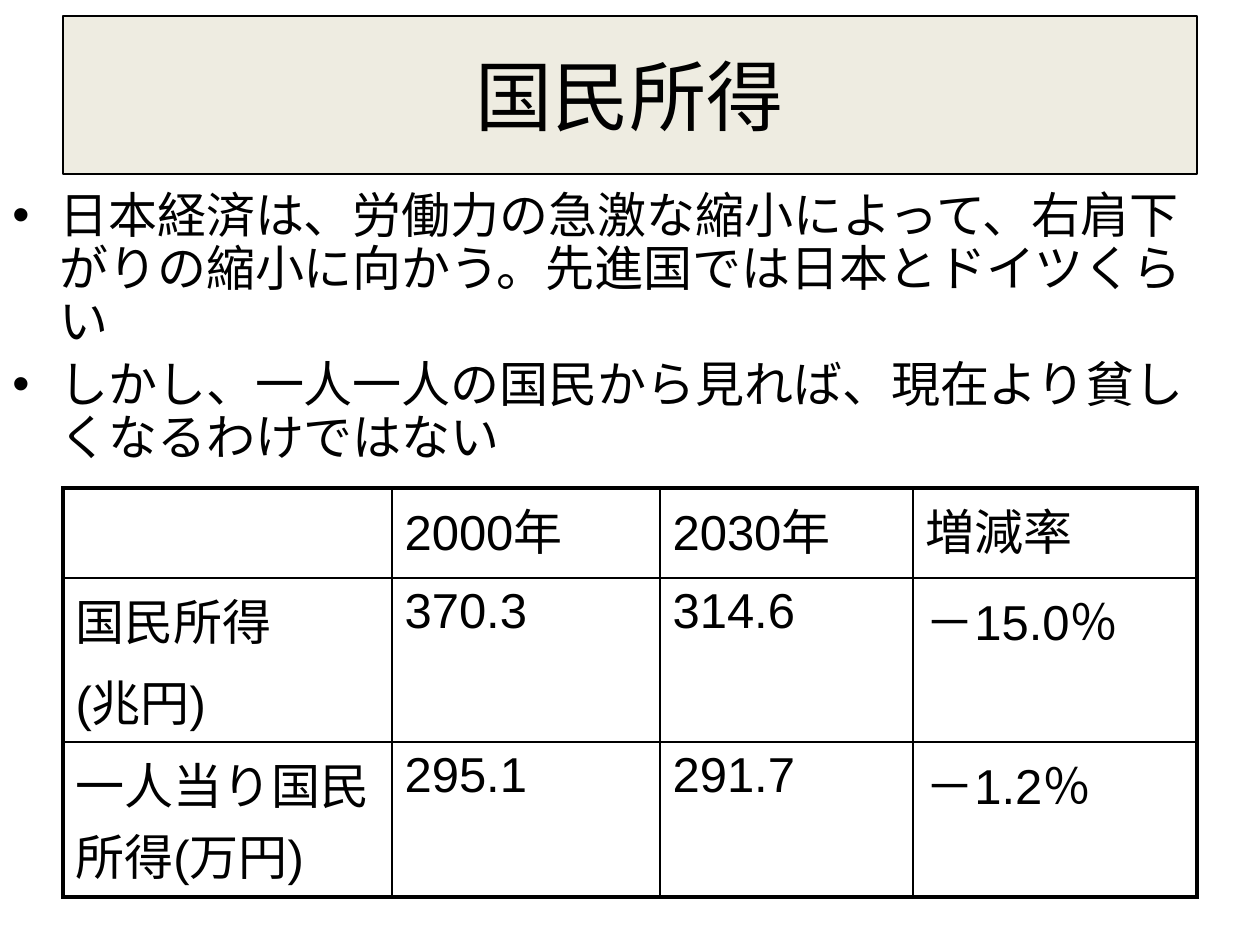
from pptx import Presentation
from pptx.dml.color import RGBColor
from pptx.enum.shapes import MSO_SHAPE
from pptx.enum.text import MSO_ANCHOR, PP_ALIGN
from pptx.oxml.ns import qn
from pptx.util import Pt
from lxml import etree

RECTANGLE = MSO_SHAPE.RECTANGLE
MIDDLE, TOP = MSO_ANCHOR.MIDDLE, MSO_ANCHOR.TOP
CENTER, LEFT = PP_ALIGN.CENTER, PP_ALIGN.LEFT
EMU_PER_PX = 914400 / 126

THEME = {
    "ink": RGBColor(0x00, 0x00, 0x00),
    "title_fill": RGBColor(0xEE, 0xEC, 0xE1),
    "title_size": Pt(44),
    "text_size": Pt(28),
    "text_font": "Calibri",
    "table_font": "Arial",
    "thin": Pt(1),
    "thick": Pt(2.25),
}

BULLETS = [
    "日本経済は、労働力の急激な縮小によって、右肩下がりの縮小に向かう。先進国では日本とドイツくらい",
    "しかし、一人一人の国民から見れば、現在より貧しくなるわけではない",
]
COLUMN_WIDTHS = [329, 268, 253, 284]
# Tall enough for two-line labels
ROW_HEIGHTS = [90, 164, 155]
INCOME_ROWS = [
    ["", "2000年", "2030年", "増減率"],
    ["国民所得\n(兆円)", "370.3", "314.6", "－15.0％"],
    ["一人当り国民所得(万円)", "295.1", "291.7", "－1.2％"],
]


def px(length):
    return round(length * EMU_PER_PX)


def area(*lengths):
    return [px(length) for length in lengths]


def apply_format(target, values):
    for name, value in values.items():
        setattr(target, name, value)


def add_child(parent, tag, **attributes):
    return etree.SubElement(parent, qn(tag), attributes)


def write_lines(frame, lines, font, size, **para_format):
    """Fill a text frame with one paragraph per line."""
    frame.word_wrap = True
    for index, line in enumerate(lines):
        para = frame.paragraphs[0] if index == 0 else frame.add_paragraph()
        apply_format(para, para_format)
        span = para.add_run()
        span.text = line
        apply_format(span.font, {"name": font, "size": size, "bold": False})
        span.font.color.rgb = THEME["ink"]
    return frame.paragraphs


def space_before(para, percent):
    spacing = add_child(para._p.get_or_add_pPr(), "a:spcBef")
    add_child(spacing, "a:spcPct", val=str(percent * 1000))


def add_bullet(para, indent):
    properties = para._p.get_or_add_pPr()
    properties.set("marL", str(px(indent)))
    properties.set("indent", str(-px(indent)))
    add_child(properties, "a:buFont", typeface="Arial")
    add_child(properties, "a:buChar", char="•")


def add_title(page, text):
    box = page.shapes.add_shape(RECTANGLE, *area(63, 16, 1134, 158))
    box.shadow.inherit = False
    box.fill.solid()
    box.fill.fore_color.rgb = THEME["title_fill"]
    box.line.color.rgb = THEME["ink"]
    box.line.width = Pt(0.75)
    box.text_frame.vertical_anchor = MIDDLE
    write_lines(box.text_frame, [text], THEME["text_font"],
                THEME["title_size"], alignment=CENTER)


def add_bullets(page, lines):
    box = page.shapes.add_textbox(*area(0, 185, 1197, 297))
    box.text_frame.vertical_anchor = TOP
    for para in write_lines(box.text_frame, lines, THEME["text_font"],
                            THEME["text_size"], alignment=LEFT, line_spacing=0.9):
        space_before(para, 20)
        add_bullet(para, 47)


def add_borders(cell, thick_sides):
    properties = cell._tc.get_or_add_tcPr()
    for side in "LRTB":
        width = THEME["thick"] if side in thick_sides else THEME["thin"]
        line = add_child(properties, f"a:ln{side}", w=str(width))
        fill = add_child(line, "a:solidFill")
        add_child(fill, "a:srgbClr", val=str(THEME["ink"]))


def add_income_table(page, rows):
    last_row, last_column = len(rows) - 1, len(COLUMN_WIDTHS) - 1
    frame = page.shapes.add_table(len(rows), len(COLUMN_WIDTHS), *area(
        63, 488, sum(COLUMN_WIDTHS), sum(ROW_HEIGHTS)))
    table = frame.table
    apply_format(table, {"first_row": False, "horz_banding": False})
    for column, width in zip(table.columns, COLUMN_WIDTHS):
        column.width = px(width)
    for row, height in zip(table.rows, ROW_HEIGHTS):
        row.height = px(height)

    for row_index, row in enumerate(rows):
        for column_index, text in enumerate(row):
            cell = table.cell(row_index, column_index)
            # The outer frame is thick, inner rules are thin
            outer = {"L": column_index == 0, "R": column_index == last_column,
                     "T": row_index == 0, "B": row_index == last_row}
            add_borders(cell, [side for side, on_edge in outer.items() if on_edge])
            cell.fill.background()
            if text:
                for para in write_lines(cell.text_frame, text.split("\n"),
                                        THEME["table_font"], THEME["text_size"]):
                    space_before(para, 20)


def main():
    deck = Presentation()
    apply_format(deck, {"slide_width": px(1260), "slide_height": px(945)})
    page = deck.slides.add_slide(deck.slide_layouts[6])
    add_title(page, "国民所得")
    add_bullets(page, BULLETS)
    add_income_table(page, INCOME_ROWS)
    deck.save("out.pptx")


if __name__ == "__main__":
    main()
